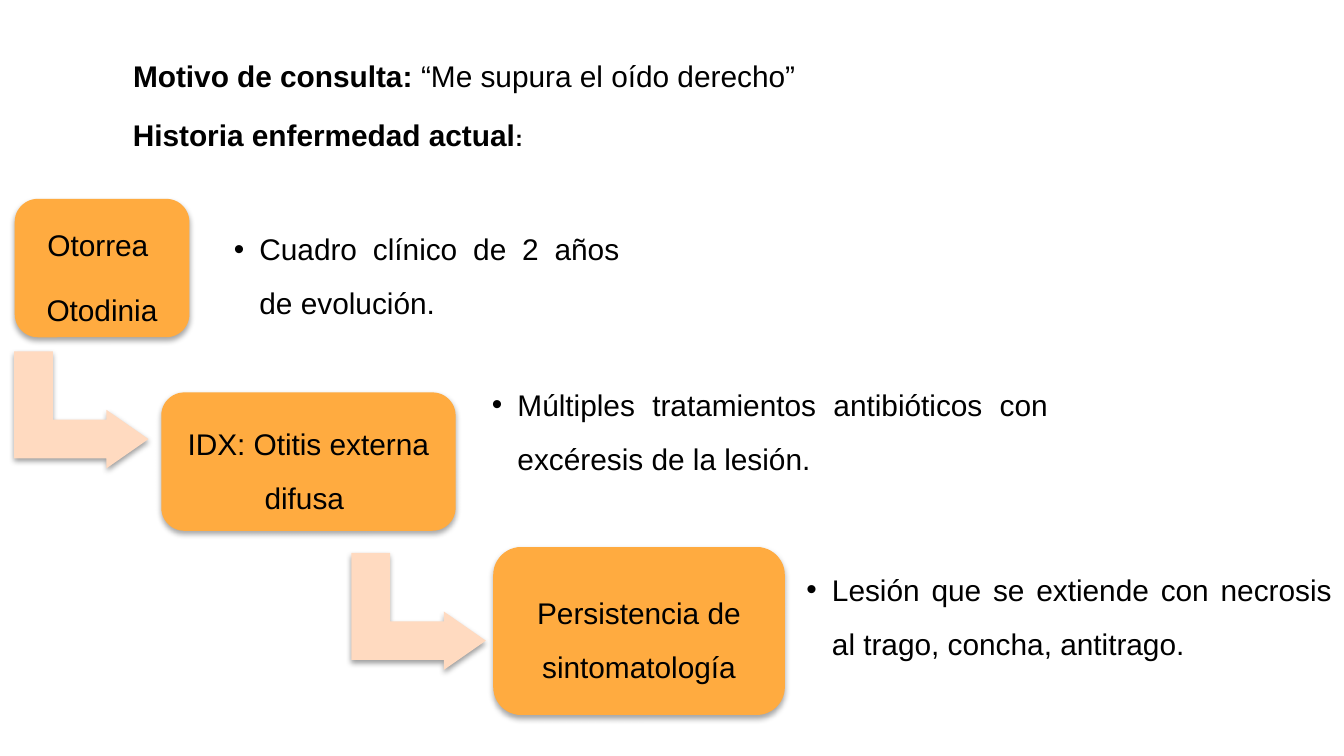
"""Build the clinical history slide: two headings and a staircase of three steps."""
from lxml import etree
from pptx import Presentation
from pptx.dml.color import RGBColor
from pptx.enum.shapes import MSO_SHAPE
from pptx.enum.text import MSO_ANCHOR, MSO_AUTO_SIZE, PP_ALIGN
from pptx.oxml import parse_xml
from pptx.oxml.ns import nsdecls, qn
from pptx.util import Inches, Pt


def paint(sp, color, alpha, dist):
    sp.fill.solid()
    sp.fill.fore_color.rgb = RGBColor.from_string(color)
    sp.line.fill.background()
    sp._element.spPr.append(parse_xml(
        f'<a:effectLst {nsdecls("a")}><a:outerShdw blurRad="{Pt(3.1)}" dist="{Pt(dist)}" '
        f'dir="5400000" rotWithShape="0"><a:srgbClr val="000000"><a:alpha val="{alpha}000"/>'
        '</a:srgbClr></a:outerShdw></a:effectLst>'))


def write(sp, paragraphs, align, spacing=1.0, after=0, inset=0.07):
    tf = sp.text_frame
    tf.word_wrap = True
    tf.auto_size = MSO_AUTO_SIZE.NONE
    tf.vertical_anchor = MSO_ANCHOR.MIDDLE
    tf.margin_left = tf.margin_right = Inches(inset)
    tf.margin_top = tf.margin_bottom = Inches(0.07)
    for i, runs in enumerate(paragraphs):
        p = tf.paragraphs[0] if i == 0 else tf.add_paragraph()
        p.alignment = align
        p.line_spacing = spacing
        p.space_before, p.space_after = Pt(0), Pt(after)
        for text, size, bold in runs:
            r = p.add_run()
            r.text = text
            r.font.name = "Arial"
            r.font.size = Pt(size)
            r.font.bold = bold
            r.font.color.rgb = RGBColor.from_string("000000")


prs = Presentation()
prs.slide_width = Inches(10)
prs.slide_height = prs.slide_width * 9 // 16
s = prs.slides.add_slide(prs.slide_layouts[4])
title, *bodies = s.placeholders
spare = bodies.pop()
spare._element.getparent().remove(spare._element)

history = s.shapes.add_textbox(0, 0, 0, 0)
headings = [
    (title, 0.38, [("Motivo de consulta: ", 16, True), ("“Me supura el oído derecho”", 16, False)]),
    (history, 0.82, [("Historia enfermedad actual", 16, True), (":", 12, True)]),
]
for sp, top, runs in headings:
    sp.left, sp.top, sp.width, sp.height = [Inches(v) for v in (0.89, top, 7.99, 0.37)]
    write(sp, [runs], PP_ALIGN.LEFT, inset=0.1)

for left, top in [(0.17, 2.55), (2.68, 4.05)]:
    arrow = s.shapes.add_shape(MSO_SHAPE.BENT_UP_ARROW, Inches(left), Inches(top), Inches(0.87), Inches(1))
    arrow.rotation = 90
    for i, value in enumerate((0.33, 0.25, 0.36)):
        arrow.adjustments[i] = value
    paint(arrow, "FFDAC0", 38, 1.6)

steps = [
    ((0.11, 1.48, 1.3, 1.03), ["Otorrea ", "Otodinia"],
     (1.67, 1.57, 3.01, 0.83), "Cuadro clínico de 2 años de evolución."),
    ((1.2, 2.92, 2.19, 1.03), ["IDX: Otitis externa difusa "],
     (3.59, 2.73, 4.28, 0.83), "Múltiples tratamientos antibióticos con excéresis de la lesión."),
    ((3.67, 4.07, 2.17, 1.25), ["Persistencia de sintomatología"],
     (5.93, 3.72, 4.05, 1.6), "Lesión que se extiende con necrosis al trago, concha, antitrago."),
]
for body, (box, labels, area, detail) in zip(bodies, steps):
    step = s.shapes.add_shape(MSO_SHAPE.ROUNDED_RECTANGLE, *[Inches(v) for v in box])
    paint(step, "FFAB40", 35, 1.8)
    write(step, [[(label, 16, False)] for label in labels], PP_ALIGN.CENTER, 1.5, 5.6)

    body.left, body.top, body.width, body.height = [Inches(v) for v in area]
    write(body, [[(detail, 16, False)]], PP_ALIGN.JUSTIFY, 1.5, 2.4)
    pPr = body.text_frame.paragraphs[0]._p.get_or_add_pPr()
    pPr.set("marL", str(Inches(0.19)))
    pPr.set("indent", str(Inches(-0.19)))
    etree.SubElement(pPr, qn("a:buFont")).set("typeface", "Arial")
    etree.SubElement(pPr, qn("a:buChar")).set("char", "•")

prs.save("out.pptx")
